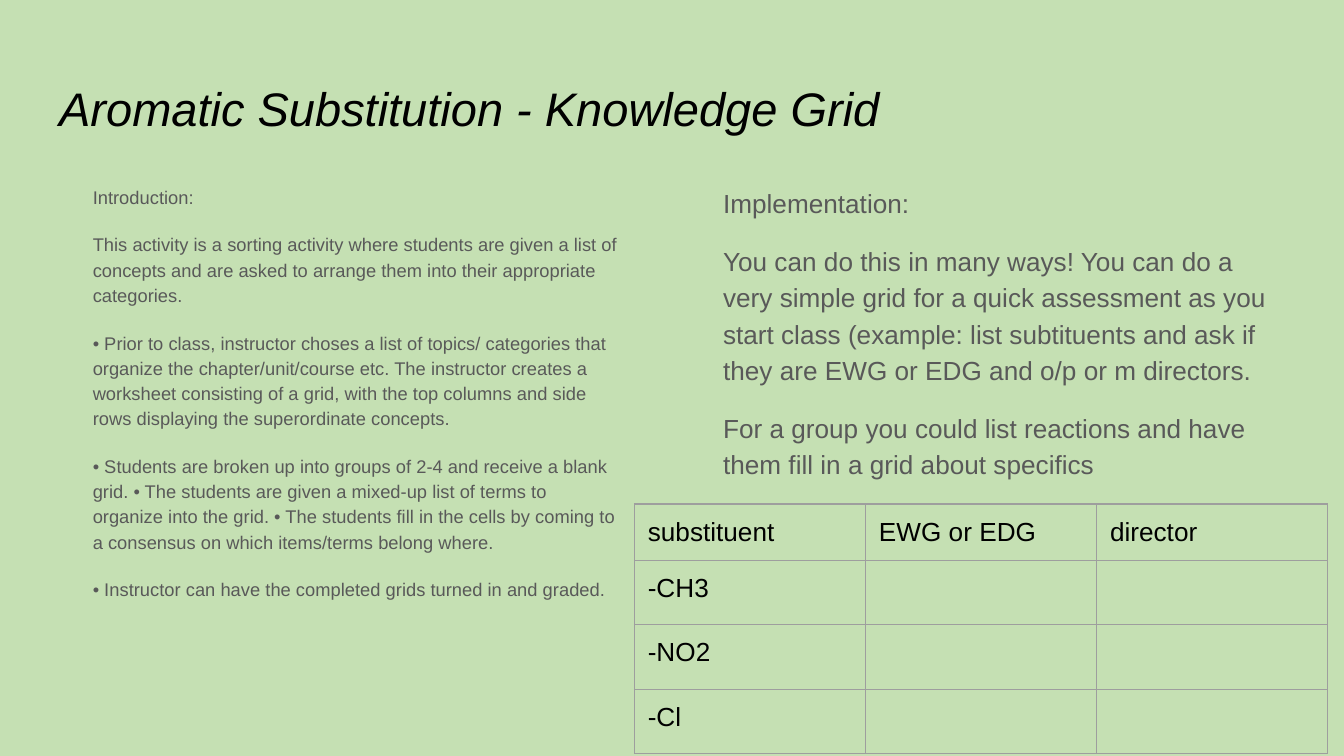
from lxml.etree import SubElement
from pptx import Presentation
from pptx.dml.color import RGBColor as RGB
from pptx.enum.text import MSO_ANCHOR as Anchor, MSO_AUTO_SIZE as Fit, PP_ALIGN as Align
from pptx.oxml.ns import qn
from pptx.util import Inches, Pt

COLORS = {"back": "C5E0B3", "title": "000000", "body": "595959", "line": "9E9E9E"}
FONT = "Arial"
PAD = Inches(0.1)

TITLE = "Aromatic Substitution - Knowledge Grid"
INTRO = [
    "Introduction:",
    "This activity is a sorting activity where students are given a list of concepts "
    "and are asked to arrange them into their appropriate categories.",
    "• Prior to class, instructor choses a list of topics/ categories that organize the "
    "chapter/unit/course etc. The instructor creates a worksheet consisting of a grid, "
    "with the top columns and side rows displaying the superordinate concepts.",
    "• Students are broken up into groups of 2-4 and receive a blank grid. • The students "
    "are given a mixed-up list of terms to organize into the grid. • The students fill in "
    "the cells by coming to a consensus on which items/terms belong where.",
    "• Instructor can have the completed grids turned in and graded.",
]
USAGE = [
    "Implementation:",
    "You can do this in many ways! You can do a very simple grid for a quick assessment "
    "as you start class (example: list subtituents and ask if they are EWG or EDG and "
    "o/p or m directors.",
    "For a group you could list reactions and have them fill in a grid about specifics",
]
GRID = [
    ["substituent", "EWG or EDG", "director"],
    ["-CH3", "", ""],
    ["-NO2", "", ""],
    ["-Cl", "", ""],
]
COL_W, HEAD_H, ROW_H = 1.72, 0.41, 0.48
GRID_SIZE = 14


def color(name):
    return RGB.from_string(COLORS[name])


def style(par, size, name, italic=False):
    for run in par.runs:
        font = run.font
        font.name, font.size, font.italic = FONT, Pt(size), italic
        font.color.rgb = color(name)


def place(shape, left, top, width, height):
    shape.left, shape.top = Inches(left), Inches(top)
    shape.width, shape.height = Inches(width), Inches(height)
    frame = shape.text_frame
    frame.margin_left = frame.margin_right = PAD
    frame.margin_top = frame.margin_bottom = PAD
    frame.vertical_anchor = Anchor.TOP
    frame.auto_size = Fit.NONE
    frame.word_wrap = True
    return frame


def write_body(shape, left, lines, size, indent):
    frame = place(shape, left, 1.26, 4.37, 3.74)
    frame.text = "\n".join(lines)
    for i, par in enumerate(frame.paragraphs):
        par.line_spacing = 1.15
        par.space_before = Pt(12 if i else 0)
        props = par._p.get_or_add_pPr()
        props.set("marL", str(Inches(indent)))
        props.set("indent", "0")
        SubElement(props, qn("a:buNone"))
        style(par, size, "body")


def draw_border(cell):
    props = cell._tc.get_or_add_tcPr()
    for i, side in enumerate(("lnL", "lnR", "lnT", "lnB")):
        line = props.makeelement(qn(f"a:{side}"), {"w": str(Pt(0.75))})
        fill = SubElement(line, qn("a:solidFill"))
        SubElement(fill, qn("a:srgbClr"), val=COLORS["line"])
        props.insert(i, line)


def fill_cell(cell, text):
    cell.text = text
    cell.margin_left = cell.margin_right = PAD
    cell.margin_top = cell.margin_bottom = PAD
    cell.fill.background()
    par = cell.text_frame.paragraphs[0]
    style(par, GRID_SIZE, "title")
    if not text:  # keeps an empty cell from stretching its row
        SubElement(par._p, qn("a:endParaRPr"), sz=str(GRID_SIZE * 100))
    draw_border(cell)


def add_grid(slide):
    rows, cols = len(GRID), len(GRID[0])
    height = HEAD_H + ROW_H * (rows - 1)
    table = slide.shapes.add_table(
        rows, cols, Inches(4.72), Inches(3.75), Inches(COL_W * cols), Inches(height)
    ).table
    table.first_row = table.horz_banding = False
    for col in table.columns:
        col.width = Inches(COL_W)
    for r, texts in enumerate(GRID):
        table.rows[r].height = Inches(ROW_H if r else HEAD_H)
        for c, text in enumerate(texts):
            fill_cell(table.cell(r, c), text)


def main():
    deck = Presentation()
    deck.slide_width = Inches(10)
    deck.slide_height = deck.slide_width * 9 // 16
    slide = deck.slides.add_slide(deck.slide_layouts[3])
    back = slide.background.fill
    back.solid()
    back.fore_color.rgb = color("back")

    title, left, right = list(slide.placeholders)[:3]
    frame = place(title, 0.34, 0.49, 9.32, 0.63)
    frame.text = TITLE
    frame.paragraphs[0].alignment = Align.LEFT
    style(frame.paragraphs[0], 25.2, "title", italic=True)

    write_body(left, 0.34, INTRO, 9.8, 0.25)
    write_body(right, 5.28, USAGE, 14, 0)
    right.fill.solid()
    right.fill.fore_color.rgb = color("back")
    add_grid(slide)
    deck.save("out.pptx")


if __name__ == "__main__":
    main()
